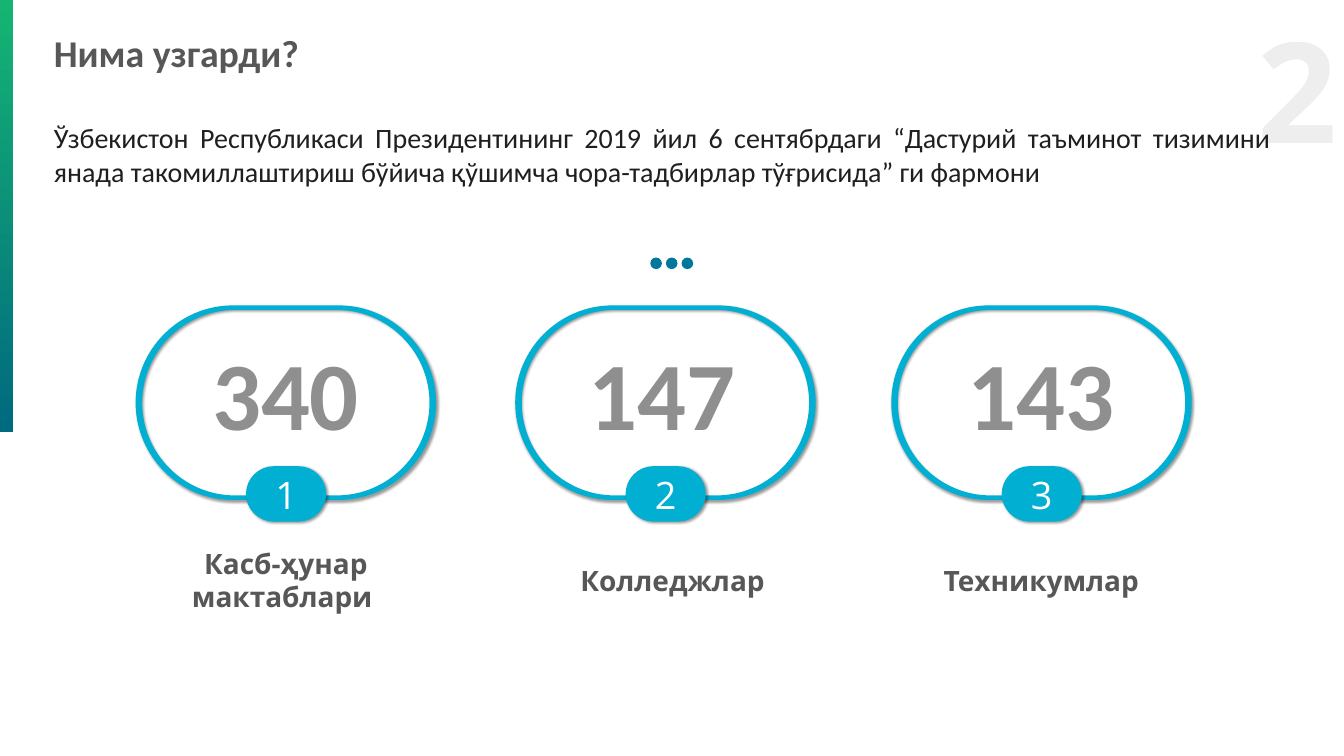
import pptx
import pptx.dml.color
import pptx.enum.shapes
import pptx.enum.text
import pptx.oxml.ns
import pptx.util
from lxml import etree

Inches = pptx.util.Inches
Pt = pptx.util.Pt
ALIGN = pptx.enum.text.PP_ALIGN
SHAPE = pptx.enum.shapes.MSO_SHAPE
qn = pptx.oxml.ns.qn

COLORS = {
    "bar_top": "15B473", "bar_bottom": "006A7F", "dot": "00779B",
    "accent": "00AFD2", "heading": "575757", "number": "8F8F8F",
    "body": "1F1F1F", "page": "282828", "white": "FFFFFF", "shadow": "000000",
}
INSTITUTIONS = [
    # number, label, ring left, number left, label box
    ("340", "Касб-ҳунар мактаблари ", 2.69, 3.78, (2.34, 10.79, 6.66, 1.45)),
    ("147", "Колледжлар", 10.22, 11.25, (10.16, 11.13, 6.36, 0.77)),
    ("143", "Техникумлар", 17.68, 18.77, (17.28, 11.13, 6.75, 0.77)),
]


def rgb(name):
    return pptx.dml.color.RGBColor.from_string(COLORS[name])


def add_child(parent, tag, **attributes):
    return etree.SubElement(parent, qn(tag), attributes)


def write(frame, text, size, font, color, align, bold=False):
    paragraph = frame.paragraphs[0]
    paragraph.alignment = align
    run = paragraph.add_run()
    run.text = text
    run.font.size = Pt(size)
    run.font.name = font
    run.font.bold = bold
    run.font.color.rgb = rgb(color)
    return run


def add_text(shapes, box, *style, bold=True):
    frame = shapes.add_textbox(*map(Inches, box)).text_frame
    frame.word_wrap = True
    return write(frame, *style, bold=bold)


def paint(shape, color):
    shape.shadow.inherit = False
    shape.line.fill.background()
    shape.fill.solid()
    shape.fill.fore_color.rgb = rgb(color)


def cast_shadow(shape):
    effects = shape._element.spPr.find(qn("a:effectLst"))
    outer = add_child(effects, "a:outerShdw", blurRad=str(Pt(4)), dist=str(Pt(3)),
                      dir="2700000", algn="tl", rotWithShape="0")
    black = add_child(outer, "a:srgbClr", val=COLORS["shadow"])
    add_child(black, "a:alpha", val="40000")


def stadium(left, top, width, height):
    """Return a start point and Bezier points, three a curve, for a box with round ends."""
    radius = height / 2
    handle = radius * 0.55
    right, bottom, middle = left + width, top + height, top + radius
    west, east = left + radius, right - radius
    points = [
        (west, top), (west, top), (east, top), (east, top),
        (east + handle, top), (right, middle - handle), (right, middle),
        (right, middle + handle), (east + handle, bottom), (east, bottom),
        (east, bottom), (west, bottom), (west, bottom),
        (west - handle, bottom), (left, middle + handle), (left, middle),
        (left, middle - handle), (west - handle, top), (west, top),
    ]
    return [(Inches(x), Inches(y)) for x, y in points]


def add_curved(shapes, *outlines):
    """Draw outlines as one accent shape, turning each three points into a curve."""
    builder = shapes.build_freeform(*outlines[0][0], scale=1.0)
    for index, outline in enumerate(outlines):
        if index:
            builder.move_to(*outline[0])
        builder.add_line_segments(outline[1:], close=True)
    shape = builder.convert_to_shape()
    lines = list(shape._element.iter(qn("a:lnTo")))
    for first, second, third in zip(lines[::3], lines[1::3], lines[2::3]):
        first.tag = qn("a:cubicBezTo")
        for line in (second, third):
            first.append(line[0])
            line.getparent().remove(line)
    paint(shape, "accent")
    cast_shadow(shape)
    return shape


def add_ring(shapes, left, top, width, height):
    side, edge = 0.13, 0.09
    inner = stadium(left + side, top + edge, width - 2 * side, height - 2 * edge)
    add_curved(shapes, stadium(left, top, width, height), inner[::-1])


def add_badge(shapes, left, top, width, height, order):
    badge = add_curved(shapes, stadium(left, top, width, height))
    badge.text_frame.vertical_anchor = pptx.enum.text.MSO_ANCHOR.MIDDLE
    write(badge.text_frame, str(order), 54, "Open Sans", "white", ALIGN.CENTER)


def add_institution(slide, left, top, order, number, label, number_left, label_box):
    shapes = slide.shapes.add_group_shape().shapes
    add_ring(shapes, left, top, 5.96, 3.86)
    add_text(shapes, label_box, label, 40, "Open Sans", "heading", ALIGN.CENTER)
    add_badge(shapes, left + 2.19, top + 3.19, 1.59, 1.1, order)
    add_text(shapes, (number_left, top + 0.52, 3.77, 2.25),
             number, 138, "Calibri", "number", ALIGN.CENTER)


def add_side_bar(slide, left, top, width, height):
    bar = slide.shapes.add_shape(SHAPE.RECTANGLE, *map(Inches, (left, top, width, height)))
    paint(bar, "bar_top")
    bar.fill.gradient()
    bar.fill.gradient_angle = 270
    ends = (("bar_top", 0), ("bar_bottom", 1))
    for stop, (color, position) in zip(bar.fill.gradient_stops, ends):
        stop.color.rgb = rgb(color)
        stop.position = position


def add_page_number(slide, box):
    run = add_text(slide.shapes, box, "2", 200, "Open Sans", "page", ALIGN.RIGHT)
    color = next(run.font._element.iter(qn("a:srgbClr")))
    add_child(color, "a:alpha", val="8000")


def add_dots(slide, left, top, size, pitch):
    shapes = slide.shapes.add_group_shape().shapes
    for index in range(3):
        dot = shapes.add_shape(SHAPE.OVAL, Inches(left + index * pitch), Inches(top),
                               Inches(size), Inches(size))
        paint(dot, "dot")


def main():
    deck = pptx.Presentation()
    deck.slide_width, deck.slide_height = Inches(26.66), Inches(15)
    slide = deck.slides.add_slide(deck.slide_layouts[6])
    add_side_bar(slide, 0, 0, 0.26, 8.58)
    add_page_number(slide, (24.43, 0.03, 2.2, 3.41))
    add_dots(slide, 12.9, 5.11, 0.23, 0.31)
    add_text(slide.shapes, (0.97, 0.54, 14.51, 1.09),
             "Нима узгарди?", 54, "Calibri", "heading", ALIGN.LEFT)
    for order, (number, label, left, number_left, label_box) in enumerate(INSTITUTIONS, 1):
        add_institution(slide, left, 6.06, order, number, label, number_left, label_box)
    add_text(slide.shapes, (0.97, 2.34, 24.33, 1.45),
             "Ўзбекистон Республикаси Президентининг 2019 йил 6 сентябрдаги “Дастурий "
             "таъминот тизимини янада такомиллаштириш бўйича қўшимча чора-тадбирлар "
             "тўғрисида” ги фармони", 40, "Calibri", "body", ALIGN.JUSTIFY, bold=False)
    deck.save("out.pptx")


if __name__ == "__main__":
    main()
